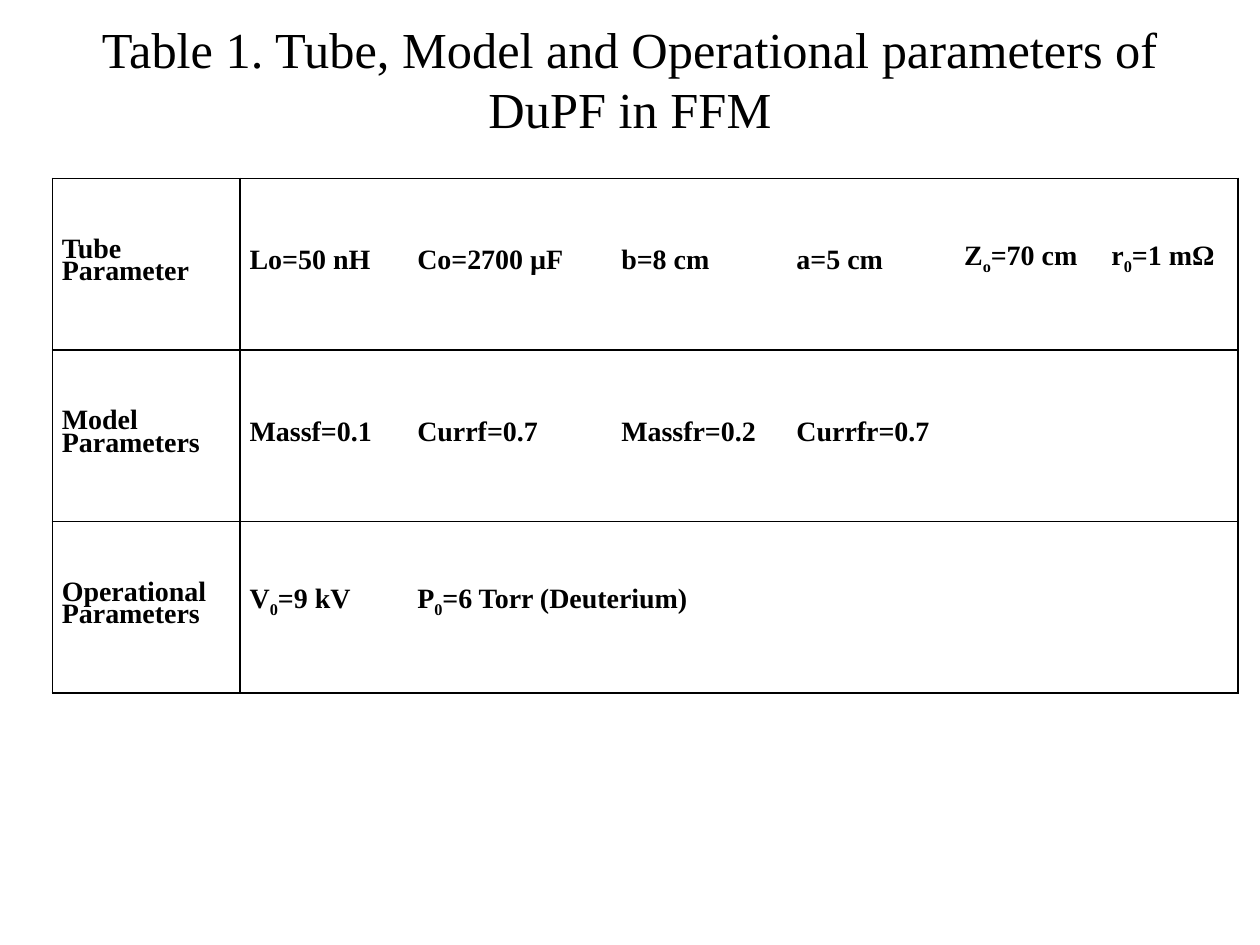
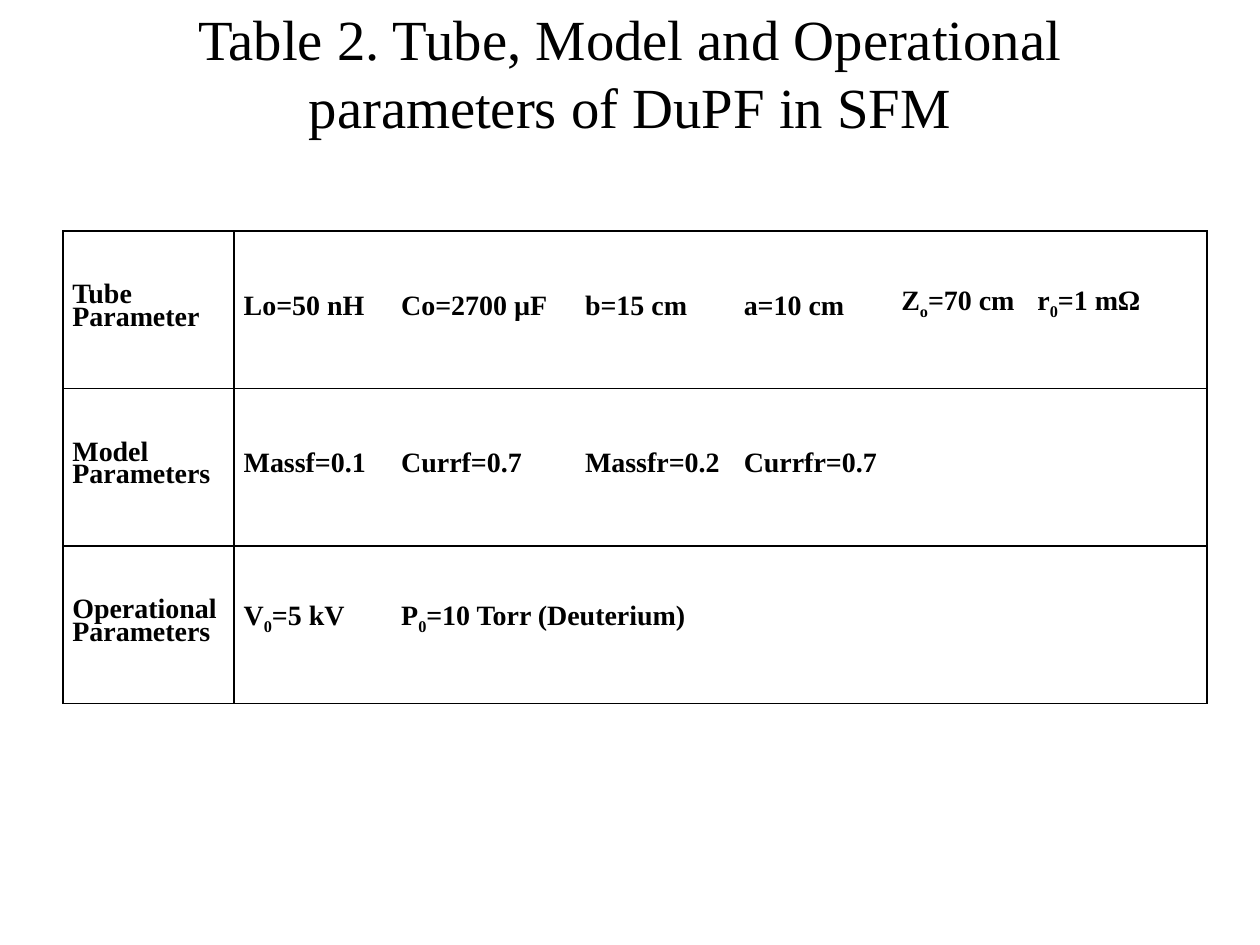
from dataclasses import dataclass

from lxml import etree
from pptx import Presentation
from pptx.dml.color import RGBColor
from pptx.enum import text
from pptx.oxml import ns
from pptx.util import Pt

BLACK = RGBColor(0x00, 0x00, 0x00)
WHITE = RGBColor(0xFF, 0xFF, 0xFF)
FONT = "Times New Roman"
THIN, THICK = 1, 1.5
CELL_MARGIN = Pt(5.4)


@dataclass(frozen=True)
class ParameterSlide:
    title: str
    title_size: float
    title_pitch: float
    title_height: float
    left: float
    top: float
    row_height: float
    columns: tuple[float, ...]
    b: str
    a: str
    voltage: str
    pressure: str

    def rows(self) -> list[list[str]]:
        """Cell texts by row; an underscore lowers the next character."""
        return [
            ["Tube Parameter", "Lo=50 nH", "Co=2700 µF", f"b={self.b}",
             f"a={self.a}", "Z_o=70 cm", "r_0=1 mΩ"],
            ["Model Parameters", "Massf=0.1", "Currf=0.7", "Massfr=0.2",
             "Currfr=0.7"],
            ["Operational Parameters", f"V_0={self.voltage}",
             f"P_0={self.pressure} (Deuterium)"],
        ]


SLIDES = [
    ParameterSlide(
        "Table 1. Tube, Model and Operational parameters of DuPF in FFM",
        28.8, 34.3, 90, 30, 102, 98,
        (107.3, 95.8, 116.6, 100.1, 95.8, 84.2, 77.8),
        "8 cm", "5 cm", "9 kV", "6 Torr"),
    ParameterSlide(
        "Table 2. Tube, Model and Operational parameters of DuPF in SFM",
        32.4, 38.8, 82, 36, 132, 90,
        (97.9, 90, 105.1, 90.7, 90, 77.8, 102.2),
        "15 cm", "10 cm", "5 kV", "10 Torr"),
]


def style_paragraph(para, size: float, pitch: float, bold: bool = False) -> None:
    para.line_spacing = Pt(pitch)
    para.font.name = FONT
    para.font.size = Pt(size)
    para.font.bold = bold
    para.font.color.rgb = BLACK


def add_title(page, content: ParameterSlide) -> None:
    box = page.shapes.add_textbox(Pt(36), Pt(0), Pt(648), Pt(content.title_height))
    frame = box.text_frame
    frame.word_wrap = True
    frame.vertical_anchor = text.MSO_ANCHOR.MIDDLE
    para = frame.paragraphs[0]
    para.alignment = text.PP_ALIGN.CENTER
    para.add_run().text = content.title
    style_paragraph(para, content.title_size, content.title_pitch)


def set_borders(cell, left: float, right: float) -> None:
    """Rule the cell above and below, and at the sides where a width is given."""
    properties = cell._tc.get_or_add_tcPr()
    widths = {"lnL": left, "lnR": right, "lnT": THIN, "lnB": THIN}
    for position, (side, width) in enumerate(widths.items()):
        line = etree.Element(ns.qn(f"a:{side}"), w=str(Pt(width)))
        if width:
            fill = etree.SubElement(line, ns.qn("a:solidFill"))
            etree.SubElement(fill, ns.qn("a:srgbClr"), val=str(BLACK))
        else:
            etree.SubElement(line, ns.qn("a:noFill"))
        properties.insert(position, line)


def write_cell(cell, wording: str) -> None:
    para = cell.text_frame.paragraphs[0]
    base, _, lowered = wording.partition("_")
    para.add_run().text = base
    if lowered:
        subscript = para.add_run()
        subscript.text = lowered[0]
        subscript._r.get_or_add_rPr().set("baseline", "-25000")
        para.add_run().text = lowered[1:]
    style_paragraph(para, 16, 13, bold=True)


def add_parameter_table(page, content: ParameterSlide) -> None:
    rows = content.rows()
    last = len(content.columns) - 1
    table = page.shapes.add_table(
        len(rows), len(content.columns), Pt(content.left), Pt(content.top),
        Pt(sum(content.columns)), Pt(content.row_height * len(rows))).table
    table.first_row = table.horz_banding = False
    for column, width in zip(table.columns, content.columns):
        column.width = Pt(width)

    # Side rules frame the heading column and close the table on the right
    left_rules = {0: THIN, 1: THICK}
    right_rules = {0: THICK, last: THIN}
    for row_index, wordings in enumerate(rows):
        table.rows[row_index].height = Pt(content.row_height)
        for index in range(last + 1):
            cell = table.cell(row_index, index)
            cell.fill.solid()
            cell.fill.fore_color.rgb = WHITE
            cell.vertical_anchor = text.MSO_ANCHOR.MIDDLE
            cell.margin_left = cell.margin_right = CELL_MARGIN
            cell.margin_top = cell.margin_bottom = 0
            set_borders(cell, left_rules.get(index, 0), right_rules.get(index, 0))
            if index < len(wordings):
                write_cell(cell, wordings[index])

    # The pressure entry spans two columns
    table.cell(2, 2).merge(table.cell(2, 3))


def main() -> None:
    deck = Presentation()
    deck.slide_width, deck.slide_height = Pt(720), Pt(540)
    for content in SLIDES:
        page = deck.slides.add_slide(deck.slide_layouts[6])
        page.background.fill.solid()
        page.background.fill.fore_color.rgb = WHITE
        add_title(page, content)
        add_parameter_table(page, content)
    deck.save("out.pptx")


if __name__ == "__main__":
    main()
